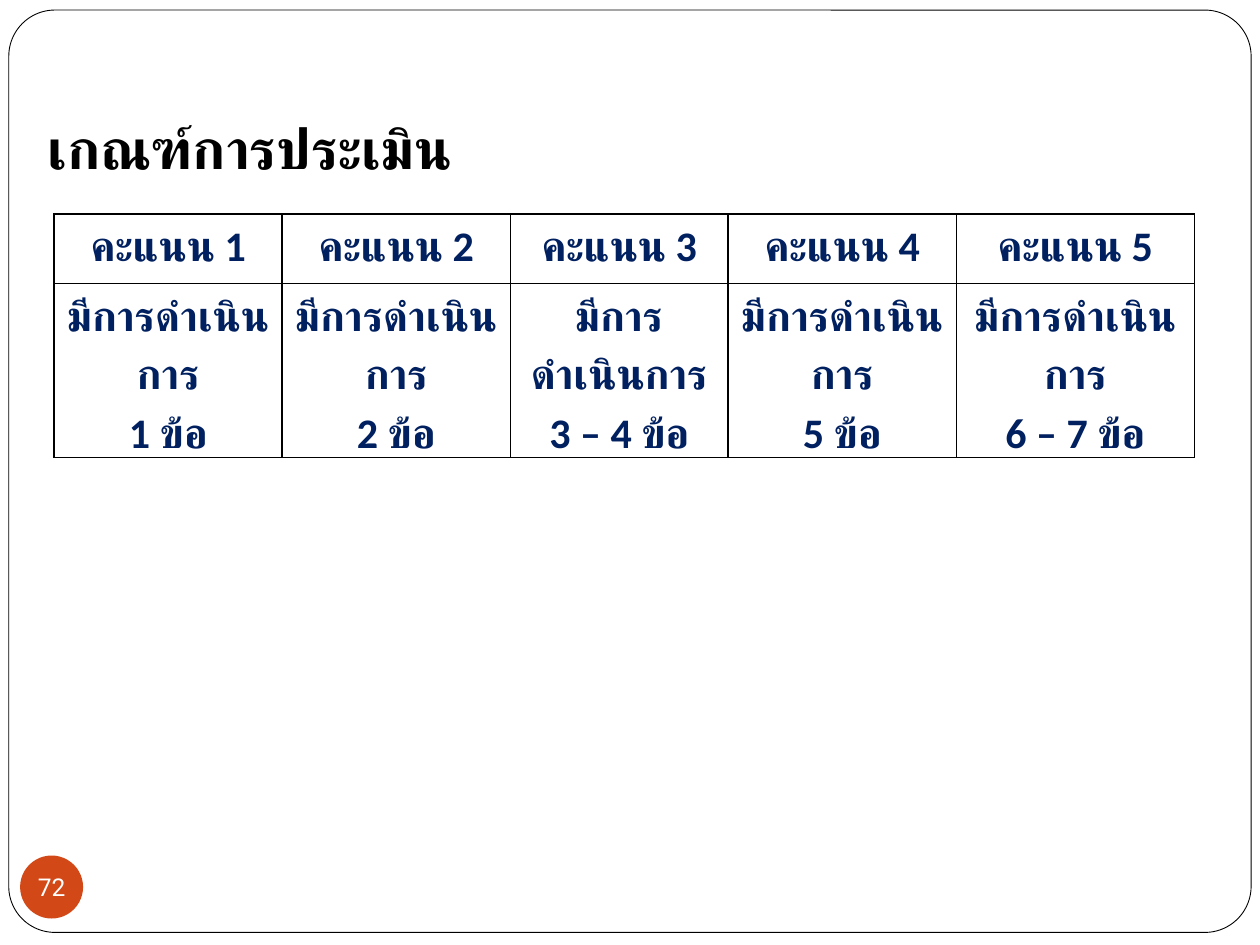
from dataclasses import dataclass

import lxml.etree
import pptx
import pptx.dml.color
import pptx.enum.shapes
import pptx.enum.text
import pptx.oxml.ns
import pptx.util
from pptx.util import Inches

COLORS = {"paper": "FFFFFF", "ink": "000000", "navy": "002060", "badge": "D34817"}
ALIGN = pptx.enum.text.PP_ALIGN
ANCHOR = pptx.enum.text.MSO_ANCHOR
SHAPES = pptx.enum.shapes.MSO_SHAPE
qn = pptx.oxml.ns.qn


@dataclass
class Score:
    heading: str
    requirement: str
    count: str
    width: float


ACTION = "มีการดำเนินการ"
SCORES = [
    Score("คะแนน 1", ACTION, "1 ข้อ", 1.81),
    Score("คะแนน 2", ACTION, "2 ข้อ", 1.81),
    Score("คะแนน 3", ACTION, "3 – 4 ข้อ", 1.73),
    Score("คะแนน 4", ACTION, "5 ข้อ", 1.81),
    Score("คะแนน 5", ACTION, "6 – 7 ข้อ", 1.89),
]
ROW_HEIGHTS = [0.55, 1.1]


def color(name: str) -> pptx.dml.color.RGBColor:
    return pptx.dml.color.RGBColor.from_string(COLORS[name])


def write(frame, lines: list[str], *, size: float, ink: str, font: str = "Calibri",
          bold: bool = False, align=ALIGN.LEFT, spacing: float = 1.0) -> None:
    """Put one paragraph per line into a text frame, for Latin and Thai letters alike."""
    for index, line in enumerate(lines):
        para = frame.add_paragraph() if index else frame.paragraphs[0]
        para.alignment = align
        para.line_spacing = spacing
        span = para.add_run()
        span.text = line
        span.font.name = font
        span.font.size = pptx.util.Pt(size)
        span.font.bold = bold
        span.font.color.rgb = color(ink)
        complex_font = lxml.etree.SubElement(span.font._element, qn("a:cs"))
        complex_font.set("typeface", font)


def set_margins(target, side: float, top: float) -> None:
    target.margin_left = target.margin_right = Inches(side)
    target.margin_top = target.margin_bottom = Inches(top)


def add_frame(slide) -> None:
    frame = slide.shapes.add_shape(SHAPES.ROUNDED_RECTANGLE, Inches(0.07), Inches(0.08),
                                   Inches(9.86), Inches(7.32))
    frame.adjustments[0] = 0.05
    frame.shadow.inherit = False
    frame.fill.solid()
    frame.fill.fore_color.rgb = color("paper")
    frame.line.color.rgb = color("ink")
    frame.line.width = pptx.util.Pt(0.5)


def add_page_badge(slide, number: str) -> None:
    badge = slide.shapes.add_shape(SHAPES.OVAL, Inches(0.16), Inches(6.79),
                                   Inches(0.5), Inches(0.5))
    badge.shadow.inherit = False
    badge.fill.solid()
    badge.fill.fore_color.rgb = color("badge")
    badge.line.fill.background()
    box = badge.text_frame
    box.word_wrap = False
    box.vertical_anchor = ANCHOR.MIDDLE
    set_margins(box, 0, 0)
    write(box, [number], size=14, ink="paper", font="Roboto", align=ALIGN.CENTER)


def add_title(slide, text: str) -> None:
    box = slide.shapes.add_textbox(Inches(0.28), Inches(0.85), Inches(9.45), Inches(0.65))
    box.text_frame.word_wrap = True
    write(box.text_frame, [text], size=32, ink="ink", bold=True)


def add_borders(cell) -> None:
    properties = cell._tc.get_or_add_tcPr()
    for position, side in enumerate(("a:lnL", "a:lnR", "a:lnT", "a:lnB")):
        border = lxml.etree.Element(qn(side), w=str(pptx.util.Pt(1)))
        fill = lxml.etree.SubElement(border, qn("a:solidFill"))
        lxml.etree.SubElement(fill, qn("a:srgbClr"), val=COLORS["ink"])
        properties.insert(position, border)


def fill_cell(cell, lines: list[str]) -> None:
    cell.fill.background()
    add_borders(cell)
    set_margins(cell, 0.07, 0)
    write(cell.text_frame, lines, size=24, ink="navy", bold=True,
          align=ALIGN.CENTER, spacing=1.15)


def add_score_table(slide, scores: list[Score]) -> None:
    width = sum(score.width for score in scores)
    table = slide.shapes.add_table(len(ROW_HEIGHTS), len(scores), Inches(0.43), Inches(1.7),
                                   Inches(width), Inches(sum(ROW_HEIGHTS))).table
    table.first_row = table.horz_banding = False
    for row, height in zip(table.rows, ROW_HEIGHTS):
        row.height = Inches(height)
    for column, score in enumerate(scores):
        table.columns[column].width = Inches(score.width)
        fill_cell(table.cell(0, column), [score.heading])
        fill_cell(table.cell(1, column), [score.requirement, score.count])


def main() -> None:
    deck = pptx.Presentation()
    deck.slide_width, deck.slide_height = Inches(10), Inches(7.5)
    page = deck.slides.add_slide(deck.slide_layouts[6])
    page.background.fill.solid()
    page.background.fill.fore_color.rgb = color("paper")
    add_frame(page)
    add_page_badge(page, "72")
    add_title(page, "เกณฑ์การประเมิน")
    add_score_table(page, SCORES)
    deck.save("out.pptx")


if __name__ == "__main__":
    main()
